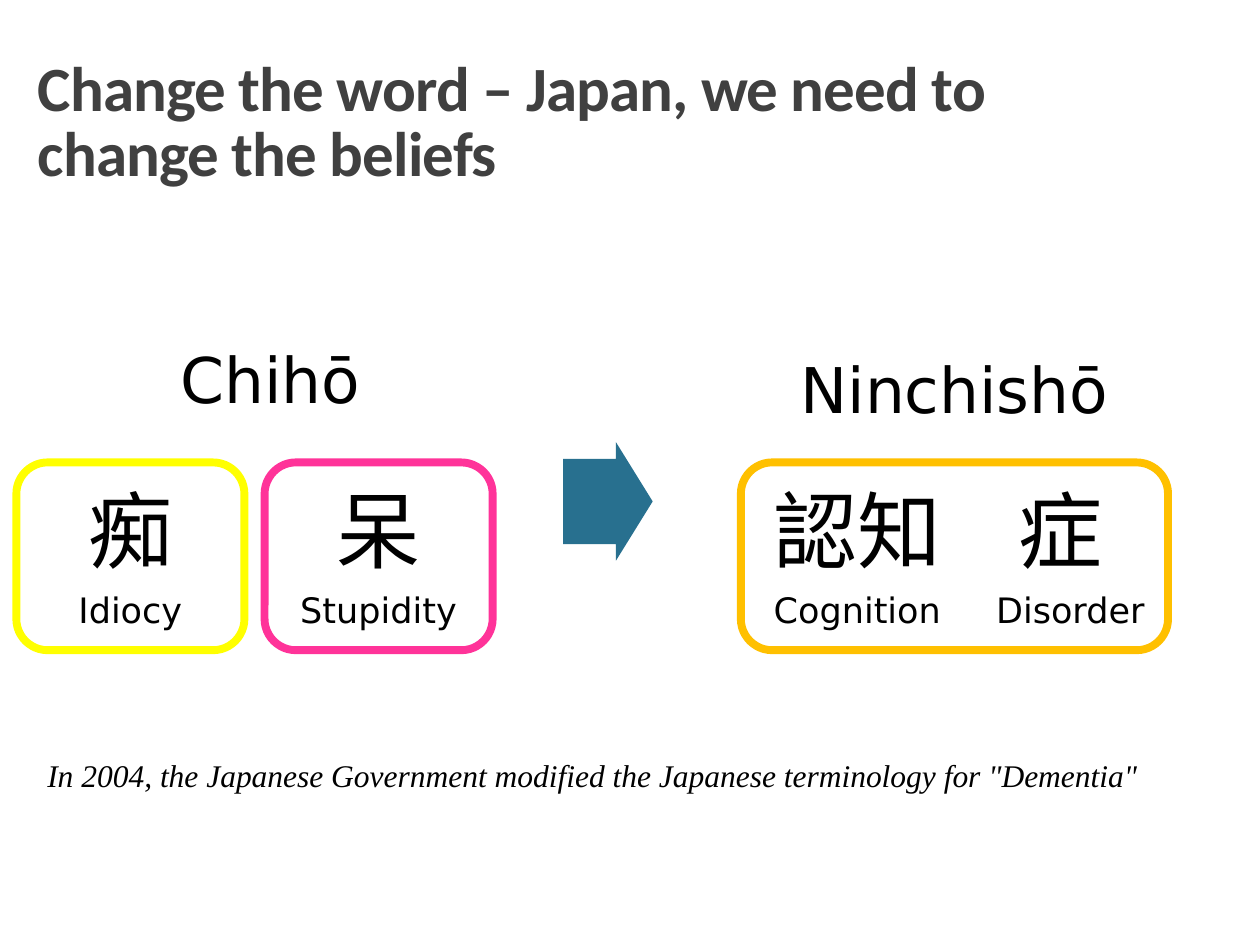
from dataclasses import dataclass

from pptx import Presentation
from pptx import util as u
from pptx.dml.color import RGBColor
from pptx.enum import shapes, text

# Grid: 100 columns by 75 rows over the whole slide
SLIDE_WIDTH, SLIDE_HEIGHT = u.Inches(10), u.Inches(7.5)
COLUMN, ROW = SLIDE_WIDTH / 100, SLIDE_HEIGHT / 75
LATIN, KANJI, SERIF = "DejaVu Sans", "Arial", "Times New Roman"
FRAME_TOP, KANJI_TOP, MEANING_TOP = 36.7, 37.5, 46.2


@dataclass
class Character:
    kanji: str
    meaning: str
    center: float
    meaning_center: float
    kanji_width: float
    meaning_width: float
    font: str = KANJI


@dataclass
class Frame:
    left: float
    width: float
    color: str
    characters: list[Character]


@dataclass
class Caption:
    wording: str
    center: float
    top: float
    width: float


FRAMES = [
    Frame(1.3, 18.1, "FFFF00", [Character("痴", "Idiocy", 10.35, 10.35, 8.7, 10.5)]),
    Frame(21, 18.1, "FF3399", [Character("呆", "Stupidity", 30.05, 30.05, 8.7, 14.6)]),
    Frame(58.8, 33.9, "FFC000", [
        Character("認知", "Cognition", 68.05, 68.05, 15.5, 15.3),
        Character("症", "Disorder", 84.2, 84.95, 8.8, 13.9, LATIN),
    ]),
]
CAPTIONS = [Caption("Chihō", 21.45, 26.5, 18.1), Caption("Ninchishō", 75.75, 27.3, 26.5)]


def rgb(color: str) -> RGBColor:
    return RGBColor.from_string(color)


def place(left: float, top: float, width: float, height: float) -> tuple[int, ...]:
    """Turn columns and rows into lengths."""
    return (round(left * COLUMN), round(top * ROW),
            round(width * COLUMN), round(height * ROW))


def write(paragraph, wording: str, *, size: float, font: str, color: str = "000000",
          bold: bool = False, italic: bool = False,
          align=text.PP_ALIGN.CENTER, spacing: int = 0) -> None:
    paragraph.alignment = align
    run = paragraph.add_run()
    run.text = wording
    run.font.size = u.Pt(size)
    run.font.name = font
    run.font.bold = bold
    run.font.italic = italic
    run.font.color.rgb = rgb(color)
    if spacing:
        run._r.get_or_add_rPr().set("spc", str(spacing))


def add_label(parent, wording: str, center: float, top: float, width: float,
              height: float, **text_format) -> None:
    """Add a single-line text box centred on a column."""
    box = parent.add_textbox(*place(center - width / 2, top, width, height))
    box.text_frame.word_wrap = False
    box.text_frame.auto_size = text.MSO_AUTO_SIZE.SHAPE_TO_FIT_TEXT
    write(box.text_frame.paragraphs[0], wording, **text_format)


def add_frame(parent, frame: Frame) -> None:
    """Add a group with a rounded outline and its characters."""
    group = parent.add_group_shape().shapes
    for item in frame.characters:
        add_label(group, item.kanji, item.center, KANJI_TOP, item.kanji_width, 9.1,
                  size=48, font=item.font)
        add_label(group, item.meaning, item.meaning_center, MEANING_TOP,
                  item.meaning_width, 4.4, size=20, font=LATIN)
    outline = group.add_shape(shapes.MSO_SHAPE.ROUNDED_RECTANGLE,
                              *place(frame.left, FRAME_TOP, frame.width, 14.9))
    outline.shadow.inherit = False
    outline.fill.background()
    outline.line.color.rgb = rgb(frame.color)
    outline.line.width = u.Pt(4.5)


def add_arrow(parent) -> None:
    arrow = parent.add_shape(shapes.MSO_SHAPE.RIGHT_ARROW, *place(44.7, 35.1, 7.1, 9.4))
    arrow.adjustments[0], arrow.adjustments[1] = 0.72, 0.41
    arrow.shadow.inherit = False
    arrow.fill.solid()
    arrow.fill.fore_color.rgb = rgb("28708F")
    arrow.line.fill.background()


def set_title(title, wording: str) -> None:
    title.left, title.top, title.width, title.height = place(2, 3, 90, 12.5)
    frame = title.text_frame
    frame.word_wrap = True
    frame.auto_size = text.MSO_AUTO_SIZE.NONE
    frame.vertical_anchor = text.MSO_ANCHOR.BOTTOM
    paragraph = frame.paragraphs[0]
    paragraph.line_spacing = 0.85
    write(paragraph, wording, size=36, font="Calibri", color="404040", bold=True,
          align=text.PP_ALIGN.LEFT, spacing=-50)


def main() -> None:
    presentation = Presentation()
    presentation.slide_width, presentation.slide_height = SLIDE_WIDTH, SLIDE_HEIGHT
    slide = presentation.slides.add_slide(presentation.slide_layouts.get_by_name("Title Only"))

    # Title
    set_title(slide.shapes.title, "Change the word – Japan, we need to change the beliefs")

    # Old and new terms
    for caption in CAPTIONS:
        add_label(slide.shapes, caption.wording, caption.center, caption.top,
                  caption.width, 7.1, size=36, font=LATIN)
    for frame in FRAMES:
        add_frame(slide.shapes, frame)
    add_arrow(slide.shapes)

    # Closing remark
    add_label(slide.shapes,
              'In 2004, the Japanese Government modified the Japanese terminology for "Dementia"',
              47.05, 59.5, 89.5, 4, size=18, font=SERIF, italic=True)

    presentation.save("out.pptx")


if __name__ == "__main__":
    main()
